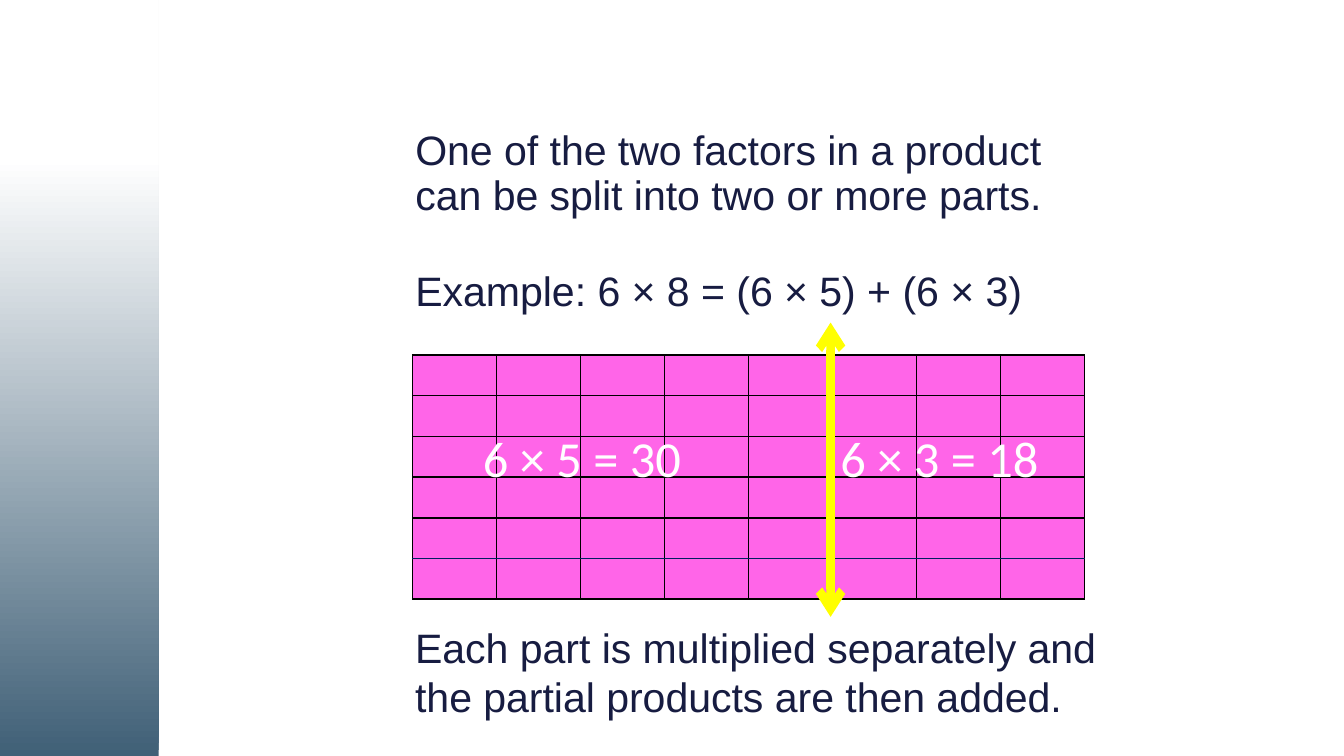
from lxml import etree
from pptx import Presentation
from pptx.dml.color import RGBColor
from pptx.enum.shapes import MSO_CONNECTOR, MSO_SHAPE
from pptx.enum.text import MSO_ANCHOR, MSO_AUTO_SIZE, PP_ALIGN
from pptx.oxml.ns import qn
from pptx.util import Inches, Pt

LINE = MSO_CONNECTOR.STRAIGHT
RECT = MSO_SHAPE.RECTANGLE
TOP = MSO_ANCHOR.TOP
GROW = MSO_AUTO_SIZE.SHAPE_TO_FIT_TEXT
FIXED = MSO_AUTO_SIZE.NONE
LEFT, CENTER = PP_ALIGN.LEFT, PP_ALIGN.CENTER

COLORS = {
    "slate": "406077",
    "white": "FFFFFF",
    "ink": "171C41",
    "pink": "FF65E8",
    "black": "000000",
    "navy": "002060",
    "yellow": "FFFF00",
}
WIDTH = Inches(10)
HEIGHT = WIDTH * 9 // 16
ROWS, COLS = 6, 8
NAVY_ROW = 5  # the rule above this row is navy


def color(name):
    return RGBColor.from_string(COLORS[name])


def set_font(para, face, size, tint):
    para.font.name = face
    para.font.size = Pt(size)
    para.font.color.rgb = color(tint)


def add_band(slide):
    """Side band that fades upward from slate to white."""
    band = slide.shapes.add_shape(RECT, 0, 0, Inches(1.18), HEIGHT)
    band.shadow.inherit = False
    band.line.fill.background()
    band.fill.gradient()
    band.fill.gradient_angle = 90
    stops = zip(band.fill.gradient_stops, ((0, "slate"), (0.79, "white")))
    for stop, (place, tint) in stops:
        stop.position = place
        stop.color.rgb = color(tint)


def fill_body(body):
    body.left, body.top = Inches(2.99), Inches(0.92)
    body.width, body.height = Inches(5.67), Inches(3.7)
    frame = body.text_frame
    frame.text = (
        "One of the two factors in a product \vcan be split into two or more parts."
        "\nExample: 6 × 8 = (6 × 5) + (6 × 3)"
    )
    frame.auto_size = FIXED
    frame.vertical_anchor = TOP
    for para, pitch, before in zip(frame.paragraphs, (0.9, 1.2), (0, 7.5)):
        props = para._p.get_or_add_pPr()
        props.set("marL", "0")
        props.set("indent", "0")
        etree.SubElement(props, qn("a:buNone"))
        para.line_spacing = pitch
        para.space_before = Pt(before)
        para.space_after = Pt(12)
        set_font(para, "Arial", 22, "ink")


def set_border(cell, side, tint):
    props = cell._tc.get_or_add_tcPr()
    edge = etree.SubElement(props, qn(f"a:ln{side}"), w=str(Pt(1)))
    fill = etree.SubElement(edge, qn("a:solidFill"))
    etree.SubElement(fill, qn("a:srgbClr"), val=COLORS[tint])


def add_grid(slide):
    """Array of 6 by 8 units."""
    frame = slide.shapes.add_table(
        ROWS, COLS, Inches(3.07), Inches(2.64), Inches(5), Inches(1.82)
    )
    table = frame.table
    table.first_row = table.horz_banding = False
    for i in range(ROWS):
        for j in range(COLS):
            cell = table.cell(i, j)
            cell.margin_top = cell.margin_bottom = 0
            cell.text_frame.paragraphs[0].font.size = Pt(10)
            navy = {"T": i == NAVY_ROW, "B": i + 1 == NAVY_ROW}
            for side in "LRTB":
                set_border(cell, side, "navy" if navy.get(side) else "black")
            cell.fill.solid()
            cell.fill.fore_color.rgb = color("pink")


def add_text(slide, text, box, face, size, tint, align=LEFT):
    shape = slide.shapes.add_textbox(*map(Inches, box))
    frame = shape.text_frame
    frame.word_wrap = True
    frame.auto_size = GROW
    para = frame.paragraphs[0]
    para.text = text
    para.alignment = align
    set_font(para, face, size, tint)


def add_split(slide):
    """Double arrow that parts the grid after five columns."""
    x = Inches(6.18)
    arrow = slide.shapes.add_connector(LINE, x, Inches(2.4), x, Inches(4.59))
    arrow.line.color.rgb = color("yellow")
    arrow.line.width = Pt(4.5)
    for end in ("headEnd", "tailEnd"):
        etree.SubElement(arrow.line._ln, qn(f"a:{end}"), type="arrow")
    etree.SubElement(arrow._element.spPr, qn("a:effectLst"))


def main():
    prs = Presentation()
    prs.slide_width, prs.slide_height = WIDTH, HEIGHT
    slide = prs.slides.add_slide(prs.slide_layouts[1])
    title = slide.shapes.title._element
    title.getparent().remove(title)

    add_band(slide)
    fill_body(slide.placeholders[1])
    add_grid(slide)
    for text, left in (("6 × 5 = 30", 3.42), ("6 × 3 = 18", 6.08)):
        box = (left, 3.13, 1.82, 0.56)
        add_text(slide, text, box, "Calibri", 27, "white", CENTER)
    add_split(slide)
    add_text(
        slide,
        "Each part is multiplied separately and the partial products are then added.",
        (2.99, 4.58, 5.41, 0.84), "Arial", 22, "ink",
    )
    prs.save("out.pptx")


if __name__ == "__main__":
    main()
